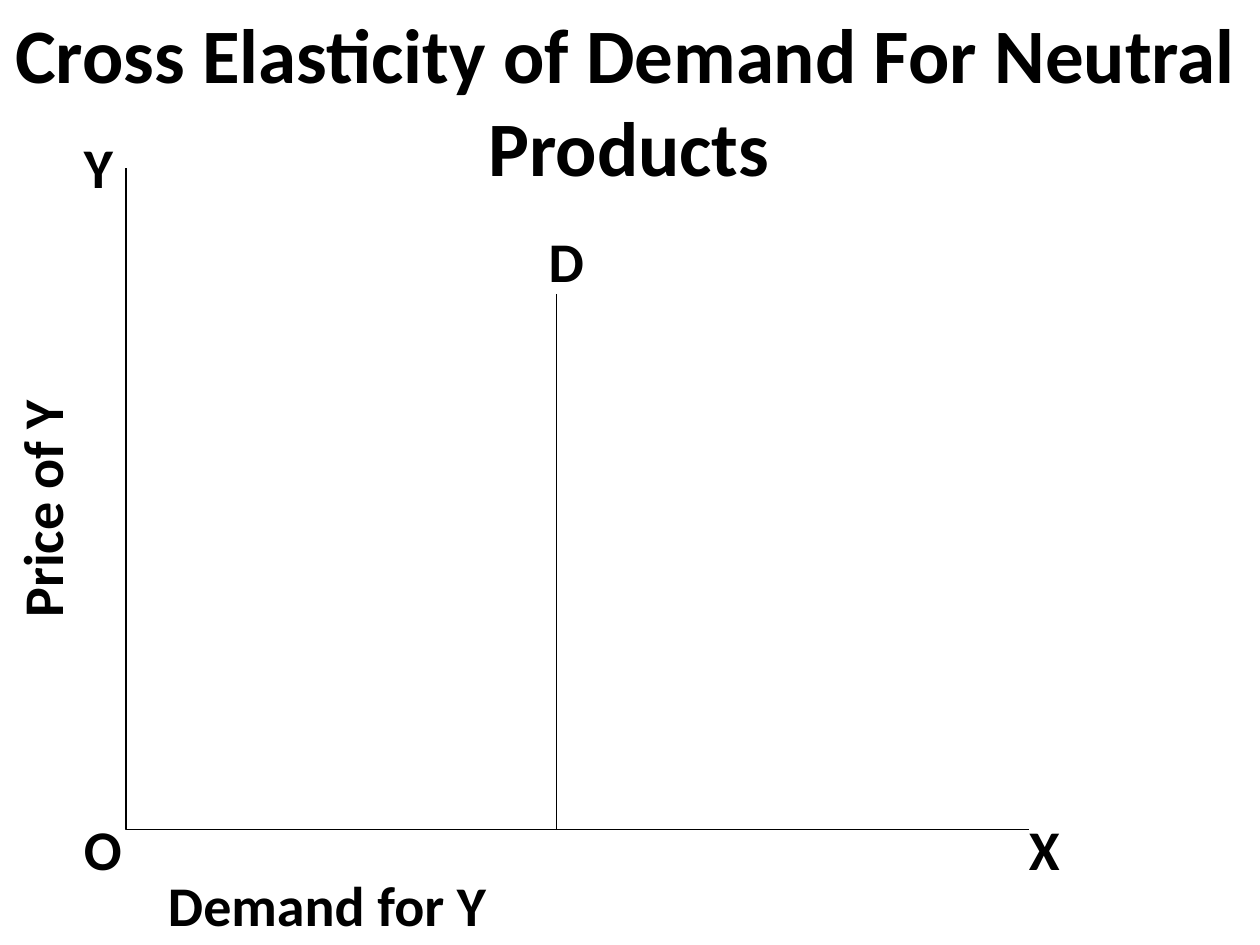
from dataclasses import dataclass
from lxml.etree import SubElement
from pptx import Presentation
from pptx.dml.color import RGBColor
from pptx.enum.shapes import MSO_CONNECTOR
from pptx.enum.text import MSO_ANCHOR, MSO_AUTO_SIZE, PP_ALIGN
from pptx.oxml.ns import qn
from pptx.util import Pt


@dataclass(frozen=True)
class Theme:
    font: str = "Calibri"
    ink: RGBColor = RGBColor(0, 0, 0)
    head: float = 44
    label: float = 32
    line: float = 0.75


def apply(item, values):
    for name, value in values.items():
        setattr(item, name, value)


class Board:
    def __init__(self, theme, slide):
        self.theme = theme
        self.slide = slide

    def place(self, shape, box):
        names = ("left", "top", "width", "height")
        apply(shape, dict(zip(names, map(Pt, box))))

    def frame(self, shape, inset=0.7):
        frame = shape.text_frame
        apply(frame, {
            "margin_left": 0, "margin_top": Pt(inset),
            "margin_right": 0, "margin_bottom": 0,
            "word_wrap": True, "vertical_anchor": MSO_ANCHOR.TOP,
            "auto_size": MSO_AUTO_SIZE.SHAPE_TO_FIT_TEXT,
        })
        return frame

    def letter(self, para, text, size, **form):
        para.text = text
        apply(para, {"alignment": PP_ALIGN.LEFT, **form})
        apply(para.font, {"name": self.theme.font, "size": Pt(size), "bold": True})
        para.font.color.rgb = self.theme.ink

    def title(self, text, box):
        shape = self.slide.shapes.title
        self.place(shape, box)
        para = self.frame(shape).paragraphs[0]
        self.letter(para, text, self.theme.head, space_before=Pt(0))

    def text(self, text, box):
        shape = self.slide.shapes.add_textbox(*map(Pt, box))
        frame = self.frame(shape)
        self.letter(frame.paragraphs[0], text, self.theme.label)
        return frame

    def upright(self, text, box):
        frame = self.text(text, box)
        frame.margin_top = 0
        frame.paragraphs[0].line_spacing = Pt(31.4)
        shape = self.slide.shapes[-1]
        shape.element.txBody.find(qn("a:bodyPr")).set("vert", "vert270")

    def stack(self, head, label, box):
        shape = self.slide.shapes.add_textbox(*map(Pt, box))
        frame = self.frame(shape, 28)
        self.letter(frame.paragraphs[0], head, self.theme.head)
        para = frame.add_paragraph()
        para._p.get_or_add_pPr().set("marL", str(Pt(34.5)))
        self.letter(para, label, self.theme.label, space_before=Pt(19.9))

    def ink(self, line):
        line.color.rgb = self.theme.ink
        line.width = Pt(self.theme.line)

    def axes(self, top, zero, end):
        pen = self.slide.shapes.build_freeform(*map(Pt, top))
        pen.add_line_segments([tuple(map(Pt, p)) for p in (zero, end)], close=False)
        shape = pen.convert_to_shape()
        shape.shadow.inherit = False
        shape.fill.background()
        self.ink(shape.line)

    def line(self, start, end):
        shape = self.slide.shapes.add_connector(
            MSO_CONNECTOR.STRAIGHT, *map(Pt, start + end))
        self.ink(shape.line)
        SubElement(shape._element.spPr, qn("a:effectLst"))


def main():
    deck = Presentation()
    apply(deck, {"slide_width": Pt(720), "slide_height": Pt(540)})
    board = Board(Theme(), deck.slides.add_slide(deck.slide_layouts[5]))
    left, right, base = 72, 588, 474
    mid = 318

    board.title("Cross Elasticity of Demand For Neutral", (8.7, 3, 705, 54.5))
    board.axes((left, 96), (left, base), (right, base))
    board.upright("Price of Y", (11, 227, 34, 126))
    for text, x, y, wide in (
        ("O", 48, 464.5, 24), ("Y", 48, 75, 19),
        ("X", right, 464.5, 20), ("Demand for Y", 96, 497, 188),
    ):
        board.text(text, (x, y, wide, 40))
    board.line((mid, 168), (mid, base))
    board.stack("Products", "D", (279, 29, 164, 140))
    deck.save("out.pptx")


if __name__ == "__main__":
    main()
